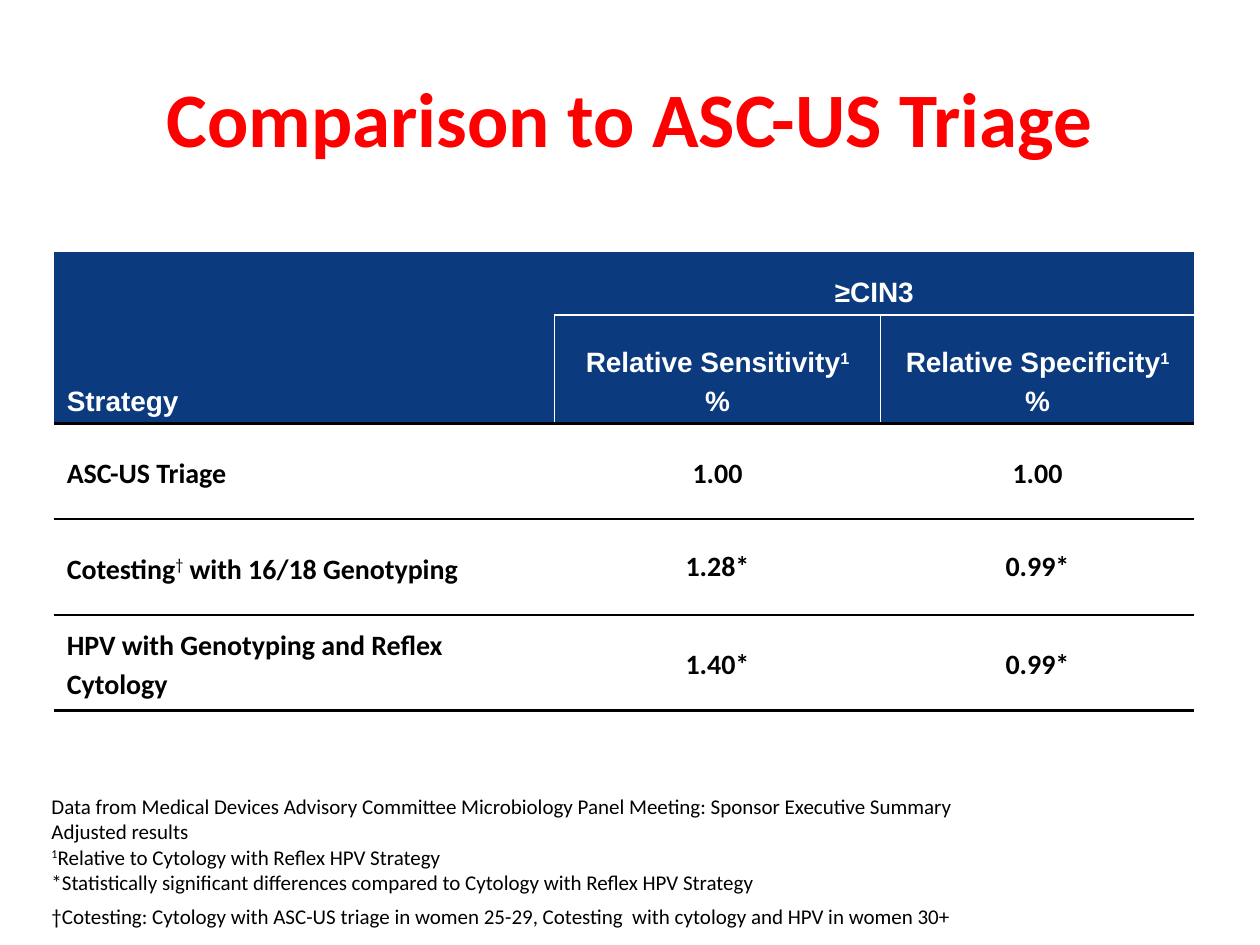
from dataclasses import dataclass

from lxml.etree import SubElement
from pptx import Presentation
from pptx.dml.color import RGBColor
from pptx.enum.text import MSO_ANCHOR, PP_ALIGN
from pptx.oxml.ns import qn
from pptx.util import Inches, Pt

BLACK, WHITE, RED, NAVY = "000000", "FFFFFF", "FF0000", "0C3A7E"
PLAIN_TABLE_STYLE = "{2D5ABB26-0587-4C30-8999-92F81FD0307C}"
COLUMN_WIDTHS = (3.97, 2.59, 2.49)
ROW_HEIGHTS = (0.5, 0.86, 0.76, 0.76, 0.76)


@dataclass
class Strategy:
    name: str
    sensitivity: str
    specificity: str


@dataclass
class TextStyle:
    font: str
    size: int
    color: str
    bold: bool = False
    align: PP_ALIGN = PP_ALIGN.LEFT
    line_spacing: float = 1.0
    gap: int = 0


def rgb(value: str) -> RGBColor:
    return RGBColor.from_string(value)


def write_paragraph(paragraph, text: str, style: TextStyle) -> None:
    """Write one paragraph; text between ^ marks is superscript."""
    paragraph.alignment = style.align
    paragraph.line_spacing = style.line_spacing
    paragraph.space_before = paragraph.space_after = Pt(style.gap)
    font = paragraph.font
    font.name, font.size, font.bold = style.font, Pt(style.size), style.bold
    font.color.rgb = rgb(style.color)
    for index, part in enumerate(text.split("^")):
        if not part:
            continue
        run = paragraph.add_run()
        run.text = part
        if index % 2:
            run._r.get_or_add_rPr().set("baseline", "30000")
            if part == "†":
                run.font.bold = False


def write_lines(frame, lines: list[str], style: TextStyle) -> None:
    for index, line in enumerate(lines):
        paragraph = frame.add_paragraph() if index else frame.paragraphs[0]
        write_paragraph(paragraph, line, style)


def add_border(cell, side: str, color: str, width: float) -> None:
    line = SubElement(cell._tc.get_or_add_tcPr(), qn(f"a:ln{side}"), w=str(Pt(width)))
    fill = SubElement(line, qn("a:solidFill"))
    SubElement(fill, qn("a:srgbClr"), val=color)


def fill_cell(cell, lines: list[str], style: TextStyle, anchor: MSO_ANCHOR) -> None:
    cell.vertical_anchor = anchor
    write_lines(cell.text_frame, lines, style)


def add_comparison_table(slide, strategies: list[Strategy]) -> None:
    table_frame = slide.shapes.add_table(
        len(ROW_HEIGHTS), len(COLUMN_WIDTHS), Inches(0.43), Inches(2),
        Inches(sum(COLUMN_WIDTHS)), Inches(sum(ROW_HEIGHTS)))
    table = table_frame.table
    table.first_row = table.horz_banding = False
    table._tbl.tblPr.find(qn("a:tableStyleId")).text = PLAIN_TABLE_STYLE
    for column, width in zip(table.columns, COLUMN_WIDTHS):
        column.width = Inches(width)
    for row, height in zip(table.rows, ROW_HEIGHTS):
        row.height = Inches(height)

    # Rules: white inside the header, black below it and between strategies
    add_border(table.cell(1, 1), "L", WHITE, 1)
    rules = ((WHITE, 1), (BLACK, 2.25), (BLACK, 1), (BLACK, 1), (BLACK, 2.25))
    for row, rule in enumerate(rules):
        for column in range(len(COLUMN_WIDTHS)):
            cell = table.cell(row, column)
            if row and (row, column) != (1, 0):
                add_border(cell, "T", *rules[row - 1])
            if (row, column) != (0, 0):
                add_border(cell, "B", *rule)
            if row < 2:
                cell.fill.solid()
                cell.fill.fore_color.rgb = rgb(NAVY)
            else:
                cell.fill.background()

    # Header
    table.cell(0, 0).merge(table.cell(1, 0))
    table.cell(0, 1).merge(table.cell(0, 2))
    label = TextStyle("Arial", 16, WHITE, True, line_spacing=1.15, gap=2)
    heading = TextStyle("Arial", 16, WHITE, True, PP_ALIGN.CENTER, gap=2)
    fill_cell(table.cell(0, 0), ["Strategy"], label, MSO_ANCHOR.BOTTOM)
    fill_cell(table.cell(0, 1), ["≥CIN3"], heading, MSO_ANCHOR.BOTTOM)
    for column, measure in enumerate(("Sensitivity", "Specificity"), start=1):
        fill_cell(table.cell(1, column), [f"Relative {measure}^1^", "%"],
                  heading, MSO_ANCHOR.BOTTOM)

    # Strategies
    name_style = TextStyle("Calibri", 16, BLACK, True, line_spacing=1.15, gap=2)
    value_style = TextStyle("Calibri", 16, BLACK, True, PP_ALIGN.CENTER, 1.15, 2)
    tight_style = TextStyle("Calibri", 16, BLACK, True, PP_ALIGN.CENTER)
    for row, strategy in enumerate(strategies, start=2):
        values = tight_style if row == 3 else value_style
        texts = (strategy.name, strategy.sensitivity, strategy.specificity)
        for column, text in enumerate(texts):
            fill_cell(table.cell(row, column), [text],
                      values if column else name_style, MSO_ANCHOR.MIDDLE)


def add_title(slide, text: str) -> None:
    title = slide.shapes.title
    title.left, title.top = Inches(0.5), Inches(0.3)
    title.width, title.height = Inches(9), Inches(1.25)
    title.text_frame.vertical_anchor = MSO_ANCHOR.MIDDLE
    write_lines(title.text_frame, [text],
                TextStyle("Calibri", 44, RED, True, PP_ALIGN.CENTER))


def add_footnotes(slide, notes: list[str], cotesting_note: str) -> None:
    box = slide.shapes.add_textbox(Inches(0.31), Inches(6.25), Inches(8.61), Inches(1.18))
    frame = box.text_frame
    frame.word_wrap = True
    write_lines(frame, notes, TextStyle("Calibri", 12, BLACK))
    write_paragraph(frame.add_paragraph(), cotesting_note,
                    TextStyle("Calibri", 12, BLACK, line_spacing=0.95, gap=6))


def main() -> None:
    presentation = Presentation()
    presentation.slide_width, presentation.slide_height = Inches(10), Inches(7.5)
    slide = presentation.slides.add_slide(presentation.slide_layouts[5])
    add_title(slide, "Comparison to ASC-US Triage")
    add_footnotes(slide, [
        "Data from Medical Devices Advisory Committee Microbiology Panel Meeting: "
        "Sponsor Executive Summary",
        "Adjusted results",
        "^1^Relative to Cytology with Reflex HPV Strategy",
        "*Statistically significant differences compared to Cytology with Reflex HPV Strategy",
    ], "†Cotesting: Cytology with ASC-US triage in women 25-29, "
       "Cotesting  with cytology and HPV in women 30+")
    add_comparison_table(slide, [
        Strategy("ASC-US Triage", "1.00", "1.00"),
        Strategy("Cotesting^†^ with 16/18 Genotyping", "1.28*", "0.99*"),
        Strategy("HPV with Genotyping and Reflex Cytology", "1.40*", "0.99*"),
    ])
    presentation.save("out.pptx")


if __name__ == "__main__":
    main()
